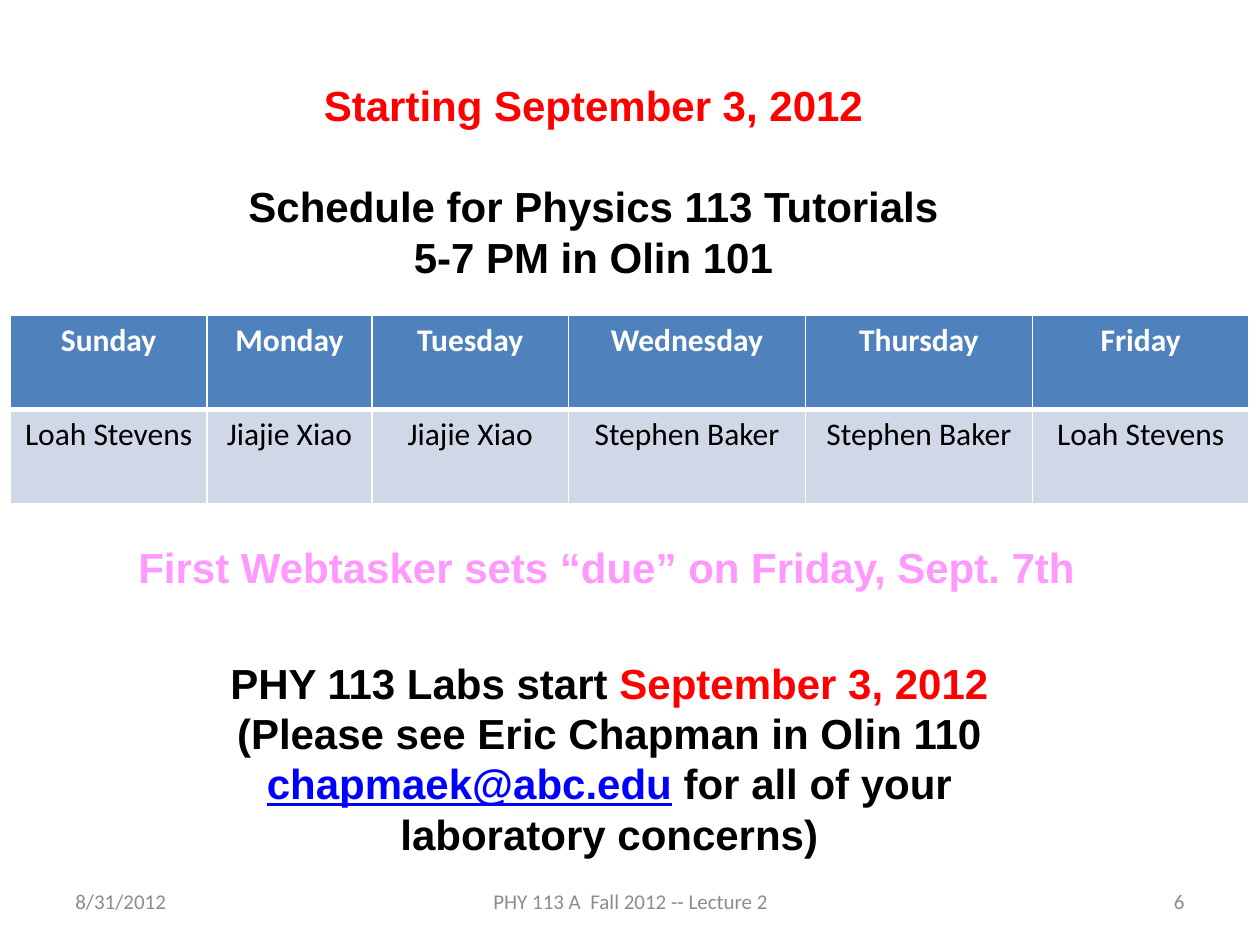
from lxml.etree import SubElement
from pptx import Presentation
from pptx.dml.color import RGBColor
from pptx.enum.text import MSO_ANCHOR as Anchor, PP_ALIGN as Align
from pptx.oxml.ns import qn
from pptx.util import Cm, Pt

BLACK, WHITE, RED, BLUE, PINK, GREY = "000000", "FFFFFF", "FF0000", "0000FF", "FF99FF", "8C8C8C"
HEADER_FILL, BODY_FILL = "4F81BD", "D0D8E8"

# Each paragraph is a list of (text, colour) runs.
TUTORIALS = [
    [("Starting September 3, 2012", RED)],
    [("Schedule for Physics 113 Tutorials", BLACK)],
    [("5-7 PM in Olin 101", BLACK)],
]
LABS = [
    [("PHY 113 Labs start ", BLACK), ("September 3, 2012", RED)],
    [("(Please see Eric Chapman in Olin 110 ", BLACK), ("chapmaek@abc.edu", BLUE),
     (" for all of your laboratory concerns)", BLACK)],
]
HOMEWORK = [[("First Webtasker sets “due” on Friday, Sept. 7th", PINK)]]
FOOTERS = [  # text, left, width, alignment
    ("8/31/2012", 1.27, 5.92, Align.LEFT),
    ("PHY 113 A  Fall 2012 -- Lecture 2", 8.69, 8.05, Align.CENTER),
    ("6", 18.21, 5.92, Align.RIGHT),
]
SCHEDULE = [  # day, tutor, column width
    ("Sunday", "Loah Stevens", 3.96),
    ("Monday", "Jiajie Xiao", 3.33),
    ("Tuesday", "Jiajie Xiao", 3.96),
    ("Wednesday", "Stephen Baker", 4.78),
    ("Thursday", "Stephen Baker", 4.57),
    ("Friday", "Loah Stevens", 4.37),
]
ROW_HEIGHT = 1.9


def color(value):
    return RGBColor.from_string(value)


def write(paragraph, text, *, size, fill, font="Arial", bold=False, underline=None,
          align=Align.CENTER):
    paragraph.alignment = align
    run = paragraph.add_run()
    run.text = text
    run.font.name = font
    run.font.size = Pt(size)
    run.font.bold = bold
    run.font.underline = underline
    run.font.color.rgb = color(fill)


def add_text_frame(slide, left, top, width, height, anchor=Anchor.TOP):
    frame = slide.shapes.add_textbox(Cm(left), Cm(top), Cm(width), Cm(height)).text_frame
    frame.word_wrap = True
    frame.vertical_anchor = anchor
    return frame


def add_notice(slide, paragraphs, left, top, width, height, align=Align.CENTER):
    """Add a bold 24 pt announcement and return its text frame."""
    frame = add_text_frame(slide, left, top, width, height)
    for index, runs in enumerate(paragraphs):
        paragraph = frame.add_paragraph() if index else frame.paragraphs[0]
        for text, fill in runs:
            write(paragraph, text, size=24, fill=fill, bold=True, align=align,
                  underline=True if fill == BLUE else None)
    return frame


def set_borders(cell, bottom):
    """Draw white cell borders, 1 pt except for the given sides."""
    properties = cell._tc.get_or_add_tcPr()
    widths = {"a:lnL": 1, "a:lnR": 1, "a:lnT": 1, "a:lnB": bottom}
    for tag, width in widths.items():
        line = SubElement(properties, qn(tag), w=str(Pt(width)))
        solid = SubElement(line, qn("a:solidFill"))
        SubElement(solid, qn("a:srgbClr"), val=WHITE)


def add_schedule(slide, left, top):
    total = sum(width for _, _, width in SCHEDULE)
    table = slide.shapes.add_table(2, len(SCHEDULE), Cm(left), Cm(top),
                                   Cm(total), Cm(2 * ROW_HEIGHT)).table
    for row in table.rows:
        row.height = Cm(ROW_HEIGHT)
    for column, (day, tutor, width) in enumerate(SCHEDULE):
        table.columns[column].width = Cm(width)
        styles = [(day, HEADER_FILL, WHITE, True, 3), (tutor, BODY_FILL, BLACK, False, 1)]
        for row, (text, fill, text_fill, bold, bottom) in enumerate(styles):
            cell = table.cell(row, column)
            set_borders(cell, bottom)
            cell.fill.solid()
            cell.fill.fore_color.rgb = color(fill)
            write(cell.text_frame.paragraphs[0], text, size=18, fill=text_fill,
                  font="Calibri", bold=bold)


def main():
    presentation = Presentation()
    presentation.slide_width, presentation.slide_height = Cm(25.4), Cm(19.05)
    slide = presentation.slides.add_slide(presentation.slide_layouts[6])

    for text, left, width, align in FOOTERS:
        frame = add_text_frame(slide, left, 17.66, width, 1.01, Anchor.MIDDLE)
        write(frame.paragraphs[0], text, size=12, fill=GREY, font="Calibri", align=align)

    tutorials = add_notice(slide, TUTORIALS, 3.18, 1.48, 17.57, 4.37)
    tutorials.paragraphs[1].space_before = Pt(29)
    add_schedule(slide, 0.21, 6.35)
    add_notice(slide, LABS, 3.5, 13.12, 17.57, 4.37)
    add_notice(slide, HOMEWORK, 2.54, 10.8, 19.9, 1.27, Align.LEFT)
    presentation.save("out.pptx")


if __name__ == "__main__":
    main()
